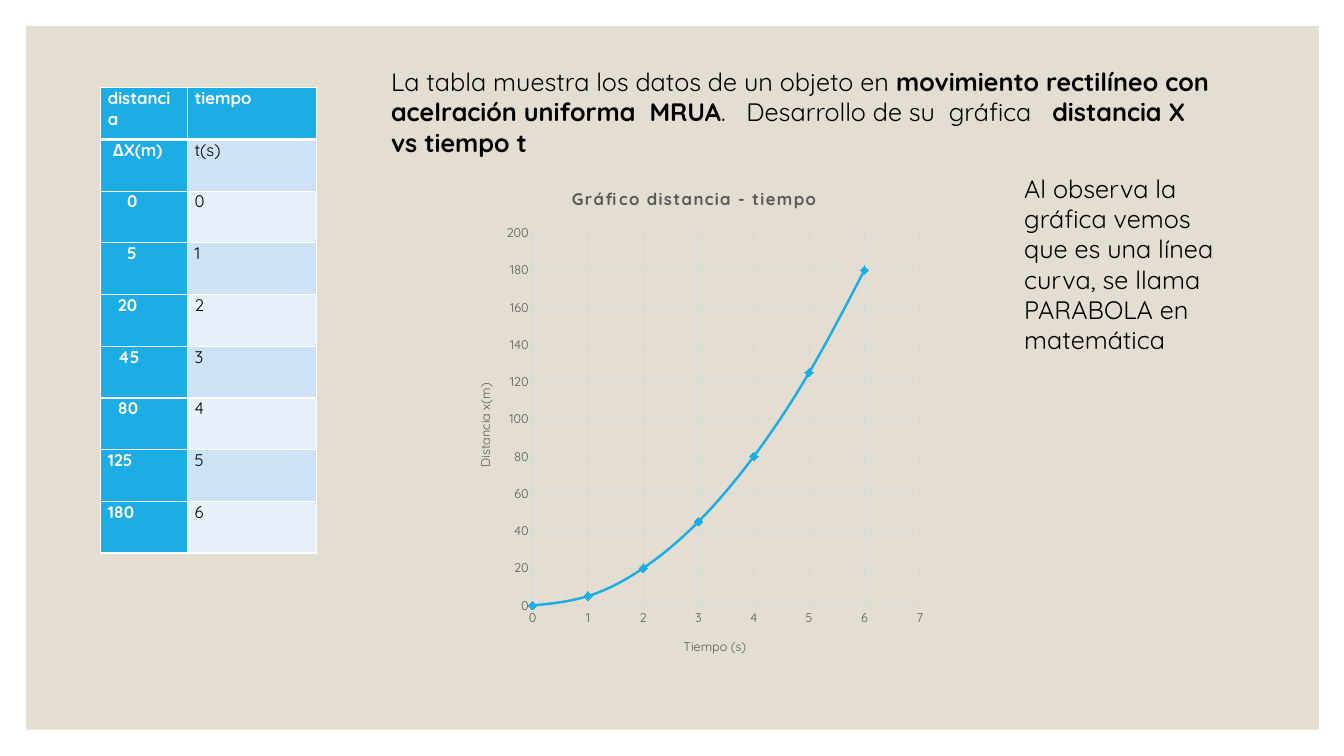
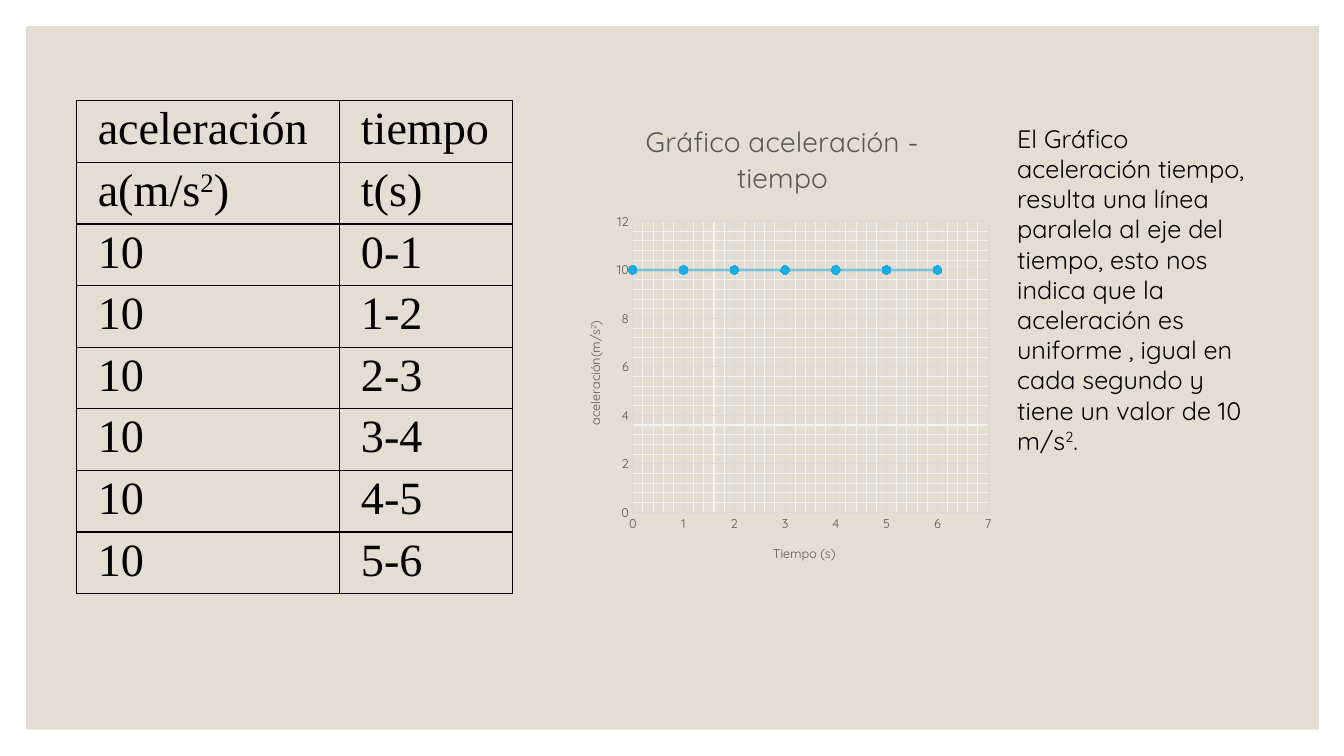
"""Build two physics slides, each with a data table, a scatter chart and a reading of it."""
from dataclasses import dataclass
from typing import NamedTuple, Optional

from lxml import etree
from pptx import Presentation
from pptx.chart.data import XyChartData
from pptx.dml.color import RGBColor
from pptx.enum.chart import XL_CHART_TYPE, XL_MARKER_STYLE, XL_TICK_MARK
from pptx.enum.shapes import MSO_SHAPE
from pptx.enum.text import MSO_AUTO_SIZE
from pptx.oxml.ns import qn
from pptx.util import Emu, Pt

EMU_PER_PX = 9144
SCATTER = XL_CHART_TYPE.XY_SCATTER_SMOOTH
DIAMOND, CIRCLE = XL_MARKER_STYLE.DIAMOND, XL_MARKER_STYLE.CIRCLE
NO_TICK = XL_TICK_MARK.NONE
RECTANGLE = MSO_SHAPE.RECTANGLE
GROW = MSO_AUTO_SIZE.SHAPE_TO_FIT_TEXT

WHITE = RGBColor(0xFF, 0xFF, 0xFF)
BLACK = RGBColor(0x00, 0x00, 0x00)
SAND = RGBColor(0xE3, 0xDE, 0xD1)
BLUE = RGBColor(0x1C, 0xAD, 0xE4)
BAND_DARK = RGBColor(0xCD, 0xE3, 0xF5)
BAND_LIGHT = RGBColor(0xE8, 0xF1, 0xFA)
GREY = RGBColor(0x59, 0x59, 0x59)
GRID = RGBColor(0xD9, 0xD9, 0xD9)
MINOR_GRID = RGBColor(0xF2, 0xF2, 0xF2)

SANS = "Quicksand"
SERIF = "Times New Roman"


class Box(NamedTuple):
    left: int
    top: int
    width: int
    height: int


class Run(NamedTuple):
    text: str
    bold: bool = False
    superscript: bool = False


class TextStyle(NamedTuple):
    size: int
    color: RGBColor = BLACK
    bold: bool = False
    font: str = SANS
    spacing: int = 0


class Cell(NamedTuple):
    runs: list[Run]
    style: TextStyle
    fill: Optional[RGBColor] = None
    indent: int = 0


@dataclass
class DataTable:
    box: Box
    columns: list[int]
    rows: list[list[Cell]]
    side_margin: int
    top_margin: int
    border: RGBColor
    header_rule: int = 1


@dataclass
class Axis:
    title: list[Run]
    maximum: int
    step: int
    has_line: bool = True


@dataclass
class Graph:
    box: Box
    title: str
    title_style: TextStyle
    time_axis: Axis
    value_axis: Axis
    values: list[int]
    marker: XL_MARKER_STYLE
    line_width: float
    line_opacity: int = 100
    minor_grid: bool = False


BODY = TextStyle(18)
AXIS_TEXT = TextStyle(9, GREY)
KEY_TEXT = TextStyle(12, WHITE, bold=True)
VALUE_TEXT = TextStyle(12)
SERIF_TEXT = TextStyle(33, font=SERIF)
TIME_AXIS = Axis([Run("Tiempo (s)")], 7, 1)


def px(length: int) -> Emu:
    return Emu(length * EMU_PER_PX)


def place(box: Box) -> tuple[Emu, ...]:
    return tuple(px(length) for length in box)


def set_font(font, style: TextStyle) -> None:
    font.name, font.size, font.bold = style.font, Pt(style.size), style.bold
    font.color.rgb = style.color


def write(text_frame, runs: list[Run], style: TextStyle) -> None:
    paragraph = text_frame.paragraphs[0]
    set_font(paragraph.font, style)
    for part in runs:
        run = paragraph.add_run()
        run.text = part.text
        if part.bold:
            run.font.bold = True
        if part.superscript:
            run._r.get_or_add_rPr().set("baseline", "30000")
        if style.spacing:
            run._r.get_or_add_rPr().set("spc", str(style.spacing))


def add_panel(prs, slide) -> None:
    panel = slide.shapes.add_shape(RECTANGLE, *place(Box(26, 26, 1282, 698)))
    panel.shadow.inherit = False
    panel.fill.solid()
    panel.fill.fore_color.rgb = SAND
    panel.line.fill.background()
    prs.slide_master.shapes.element.insert(2, panel.element)


def add_text(slide, box: Box, runs: list[Run]) -> None:
    text_frame = slide.shapes.add_textbox(*place(box)).text_frame
    text_frame.word_wrap = True
    text_frame.auto_size = GROW
    write(text_frame, runs, BODY)


def add_xml_line(parent, tag: str, color: RGBColor, width: float) -> None:
    line = etree.SubElement(parent, qn(tag), w=str(int(Pt(width))))
    fill = etree.SubElement(line, qn("a:solidFill"))
    etree.SubElement(fill, qn("a:srgbClr"), val=str(color))


def set_borders(cell, color: RGBColor, top: int, bottom: int) -> None:
    properties = cell._tc.get_or_add_tcPr()
    for side, width in (("L", 1), ("R", 1), ("T", top), ("B", bottom)):
        add_xml_line(properties, f"a:ln{side}", color, width)


def add_data_table(slide, data: DataTable) -> None:
    row_count = len(data.rows)
    table = slide.shapes.add_table(row_count, len(data.columns), *place(data.box)).table
    table.first_row = table.horz_banding = False
    for column, width in zip(table.columns, data.columns):
        column.width = px(width)
    for i, row in enumerate(data.rows):
        table.rows[i].height = Emu(px(data.box.height) // row_count)
        for j, content in enumerate(row):
            cell = table.cell(i, j)
            cell.margin_left = px(data.side_margin + content.indent)
            cell.margin_right = px(data.side_margin)
            cell.margin_top, cell.margin_bottom = px(data.top_margin), 0
            set_borders(cell, data.border,
                        top=data.header_rule if i == 1 else 1,
                        bottom=data.header_rule if i == 0 else 1)
            if content.fill is None:
                cell.fill.background()
            else:
                cell.fill.solid()
                cell.fill.fore_color.rgb = content.fill
            write(cell.text_frame, content.runs, content.style)


def set_line(line, color: RGBColor, width: float) -> None:
    line.color.rgb = color
    line.width = Pt(width)


def format_axis(axis, design: Axis, minor_grid: bool) -> None:
    axis.minimum_scale, axis.maximum_scale = 0, design.maximum
    axis.major_unit = design.step
    axis.major_tick_mark = axis.minor_tick_mark = NO_TICK
    set_font(axis.tick_labels.font, AXIS_TEXT)
    axis.has_major_gridlines = True
    set_line(axis.major_gridlines.format.line, GRID, 0.75)
    axis.has_minor_gridlines = minor_grid
    if minor_grid:
        axis.minor_unit = design.step / 5
    if design.has_line:
        set_line(axis.format.line, GRID, 0.75)
    else:
        axis.format.line.fill.background()
    write(axis.axis_title.text_frame, design.title, AXIS_TEXT)


def add_graph(slide, graph: Graph) -> None:
    data = XyChartData()
    points = data.add_series("Series 1")
    for second, value in enumerate(graph.values):
        points.add_data_point(second, value)
    chart = slide.shapes.add_chart(SCATTER, *place(graph.box), data).chart
    set_font(chart.font, TextStyle(10))
    chart.has_legend = False
    chart.has_title = True
    write(chart.chart_title.text_frame, [Run(graph.title)], graph.title_style)
    format_axis(chart.category_axis, graph.time_axis, graph.minor_grid)
    format_axis(chart.value_axis, graph.value_axis, graph.minor_grid)
    for gridlines in chart.element.iter(qn("c:minorGridlines")):
        add_xml_line(etree.SubElement(gridlines, qn("c:spPr")), "a:ln", MINOR_GRID, 0.75)
    upright = next(chart.value_axis.axis_title.element.iter(qn("a:bodyPr")))
    upright.set("rot", "-5400000")
    upright.set("vert", "horz")

    plot = chart.plots[0]
    plot.vary_by_categories = False
    curve = plot.series[0]
    set_line(curve.format.line, BLUE, graph.line_width)
    if graph.line_opacity < 100:
        line_color = next(chart.element.iter(qn("c:ser"))).find(
            "/".join(qn(tag) for tag in ("c:spPr", "a:ln", "a:solidFill", "a:srgbClr")))
        etree.SubElement(line_color, qn("a:alpha"), val=str(graph.line_opacity * 1000))
    curve.marker.style, curve.marker.size = graph.marker, 6
    curve.marker.format.fill.solid()
    curve.marker.format.fill.fore_color.rgb = BLUE
    curve.marker.format.line.fill.background()
    for smooth in chart.element.iter(qn("c:smooth")):
        smooth.set("val", "1")


def distance_rows() -> list[list[Cell]]:
    readings = [("ΔX(m)", "t(s)", 5), ("0", "0", 19), ("5", "1", 19), ("20", "2", 10),
                ("45", "3", 10), ("80", "4", 10), ("125", "5", 0), ("180", "6", 0)]
    rows = [[Cell([Run(name)], KEY_TEXT, BLUE) for name in ("distancia", "tiempo")]]
    for i, (distance, time, indent) in enumerate(readings):
        band = BAND_LIGHT if i % 2 else BAND_DARK
        rows.append([Cell([Run(distance)], KEY_TEXT, BLUE, indent),
                     Cell([Run(time)], VALUE_TEXT, band)])
    return rows


def acceleration_rows() -> list[list[Cell]]:
    unit = [Run("a(m/s"), Run("2", superscript=True), Run(")")]
    rows = [([Run("aceleración")], "tiempo"), (unit, "t(s)")]
    rows += [([Run("10")], f"{second}-{second + 1}") for second in range(6)]
    return [[Cell(left, SERIF_TEXT), Cell([Run(right)], SERIF_TEXT)] for left, right in rows]


def build_distance(slide) -> None:
    add_data_table(slide, DataTable(
        Box(100, 87, 214, 462), [86, 128], distance_rows(), 7, 0, WHITE, header_rule=3))
    add_text(slide, Box(378, 61, 842, 71), [
        Run("La tabla muestra los datos de un objeto en "),
        Run("movimiento rectilíneo con acelración uniforma  MRUA", bold=True),
        Run(".   Desarrollo de su  gráfica   "),
        Run("distancia X  vs tiempo t", bold=True)])
    add_graph(slide, Graph(
        Box(452, 167, 473, 503), "Gráfico distancia - tiempo",
        TextStyle(12, GREY, bold=True, spacing=100), TIME_AXIS,
        Axis([Run("Distancia x(m)")], 200, 20),
        [0, 5, 20, 45, 80, 125, 180], DIAMOND, 1.75))
    add_text(slide, Box(1006, 167, 214, 192), [
        Run("Al observa la gráfica vemos que es una línea curva, "
            "se llama PARABOLA en matemática")])


def build_acceleration(slide) -> None:
    add_data_table(slide, DataTable(
        Box(76, 100, 432, 489), [261, 171], acceleration_rows(), 21, 3, BLACK))
    add_graph(slide, Graph(
        Box(560, 100, 432, 477), "Gráfico aceleración - tiempo", TextStyle(20, GREY), TIME_AXIS,
        Axis([Run("aceleración(m/s"), Run("2", superscript=True), Run(")")], 12, 2, has_line=False),
        [10] * 7, CIRCLE, 2, line_opacity=50, minor_grid=True))
    add_text(slide, Box(999, 117, 246, 283), [
        Run("El Gráfico aceleración tiempo, resulta una línea paralela al eje del tiempo, "
            "esto nos indica que la aceleración es uniforme , igual en cada segundo "
            "y tiene un valor de 10 m/s"),
        Run("2", superscript=True), Run(".")])


def main() -> None:
    prs = Presentation()
    prs.slide_width, prs.slide_height = px(1333), px(750)
    blank = prs.slide_layouts[6]
    distance, acceleration = (prs.slides.add_slide(blank) for _ in range(2))
    add_panel(prs, distance)
    build_distance(distance)
    build_acceleration(acceleration)
    prs.save("out.pptx")


if __name__ == "__main__":
    main()
